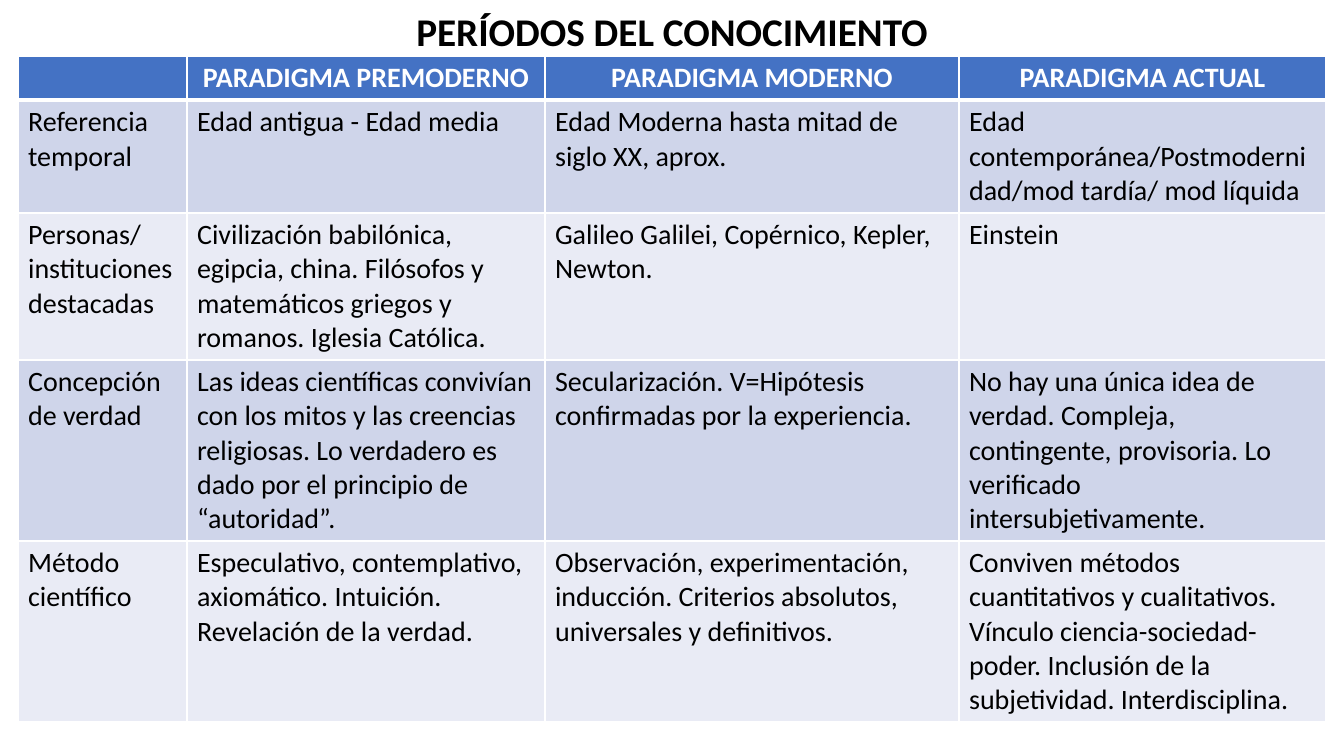
from lxml import etree
from pptx import Presentation
from pptx import util as u
from pptx.dml.color import RGBColor
from pptx.enum import text
from pptx.oxml import ns

PX = 914400 / 100.8
FONT = "Calibri"
COLORS = {
    "header": "4472C4",
    "odd_row": "CFD5EA",
    "even_row": "E9EBF5",
    "white": "FFFFFF",
    "black": "000000",
}
COLUMN_WIDTHS = [169, 358, 414, 367]
ROW_HEIGHTS = [44, 113, 147, 181, 181]
ROWS = [
    ["", "PARADIGMA PREMODERNO", "PARADIGMA MODERNO", "PARADIGMA ACTUAL"],
    [
        "Referencia temporal",
        "Edad antigua - Edad media",
        "Edad Moderna hasta mitad de siglo XX, aprox.",
        "Edad contemporánea/Postmodernidad/mod tardía/ mod líquida",
    ],
    [
        "Personas/\ninstituciones destacadas",
        "Civilización babilónica, egipcia, china. Filósofos y matemáticos "
        "griegos y romanos. Iglesia Católica.",
        "Galileo Galilei, Copérnico, Kepler, Newton.",
        "Einstein",
    ],
    [
        "Concepción de verdad",
        "Las ideas científicas convivían con los mitos y las creencias "
        "religiosas. Lo verdadero es dado por el principio de “autoridad”.",
        "Secularización. V=Hipótesis confirmadas por la experiencia.",
        "No hay una única idea de verdad. Compleja, contingente, provisoria. "
        "Lo verificado intersubjetivamente.",
    ],
    [
        "Método científico",
        "Especulativo, contemplativo, axiomático. Intuición. "
        "Revelación de la verdad.",
        "Observación, experimentación, inducción. Criterios absolutos, "
        "universales y definitivos.",
        "Conviven métodos cuantitativos y cualitativos. Vínculo "
        "ciencia-sociedad-poder. Inclusión de la subjetividad. Interdisciplina.",
    ],
]


def px(length):
    return u.Emu(round(length * PX))


def format_paragraphs(frame, size, color, bold, alignment):
    for paragraph in frame.paragraphs:
        paragraph.alignment = alignment
        for item in [paragraph, *paragraph.runs]:
            item.font.name = FONT
            item.font.size = u.Pt(size)
            item.font.bold = bold
            item.font.color.rgb = RGBColor.from_string(COLORS[color])


presentation = Presentation()
presentation.slide_width = px(1344)
presentation.slide_height = px(756)
slide = presentation.slides.add_slide(presentation.slide_layouts[5])

title = slide.shapes.title
title.left, title.top, title.width, title.height = map(px, (268, 2, 808, 57))
title.text_frame.text = "PERÍODOS DEL CONOCIMIENTO"
title.text_frame.word_wrap = True
title.text_frame.auto_size = text.MSO_AUTO_SIZE.SHAPE_TO_FIT_TEXT
title.text_frame.vertical_anchor = text.MSO_ANCHOR.TOP
format_paragraphs(title.text_frame, 28, "black", True, text.PP_ALIGN.CENTER)

table = slide.shapes.add_table(
    len(ROWS), len(COLUMN_WIDTHS), px(18), px(56),
    px(sum(COLUMN_WIDTHS)), px(sum(ROW_HEIGHTS)),
).table
for column, width in zip(table.columns, COLUMN_WIDTHS):
    column.width = px(width)

for row_index, (height, contents) in enumerate(zip(ROW_HEIGHTS, ROWS)):
    table.rows[row_index].height = px(height)
    is_header = row_index == 0
    if is_header:
        fill, color, alignment = "header", "white", text.PP_ALIGN.CENTER
    else:
        fill = "odd_row" if row_index % 2 else "even_row"
        color, alignment = "black", text.PP_ALIGN.LEFT

    for column_index, content in enumerate(contents):
        cell = table.cell(row_index, column_index)
        cell.text_frame.text = content
        format_paragraphs(cell.text_frame, 20, color, is_header, alignment)

        properties = cell._tc.get_or_add_tcPr()
        for side in "LRTB":
            thick = (row_index, side) in [(0, "B"), (1, "T")]
            border = etree.SubElement(properties, ns.qn(f"a:ln{side}"))
            border.set("w", str(u.Pt(3 if thick else 1)))
            border_fill = etree.SubElement(border, ns.qn("a:solidFill"))
            etree.SubElement(border_fill, ns.qn("a:srgbClr"), val=COLORS["white"])

        cell.fill.solid()
        cell.fill.fore_color.rgb = RGBColor.from_string(COLORS[fill])

presentation.save("out.pptx")
